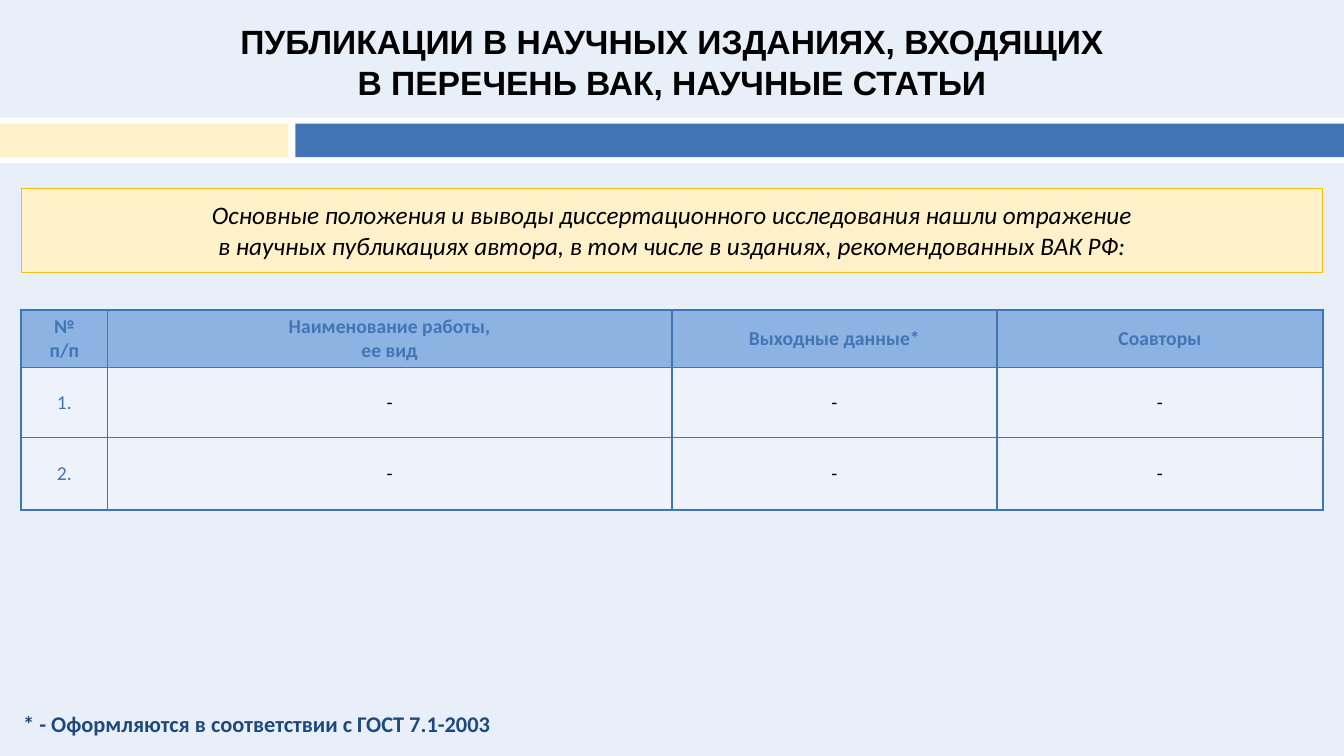
import pptx
import pptx.dml.color
import pptx.enum.shapes
import pptx.enum.text
import pptx.oxml.ns
import pptx.util
from lxml import etree

Pt = pptx.util.Pt
ALIGN = pptx.enum.text.PP_ALIGN
ANCHOR = pptx.enum.text.MSO_ANCHOR

COLORS = {
    "background": "E8EFF9",
    "white": "FFFFFF",
    "black": "000000",
    "blue": "4175B5",
    "navy": "1F497D",
    "cream": "FFF2CB",
    "gold": "F5BD14",
    "header": "8DB3E2",
    "cell": "EEF2FA",
}

SLIDE_WIDTH, SLIDE_HEIGHT = 960, 540
MARGIN = 15.2
CONTENT_WIDTH = SLIDE_WIDTH - 2 * MARGIN

TITLE = ["ПУБЛИКАЦИИ В НАУЧНЫХ ИЗДАНИЯХ, ВХОДЯЩИХ", "В ПЕРЕЧЕНЬ ВАК, НАУЧНЫЕ СТАТЬИ"]
SUMMARY = [
    "Основные положения и выводы диссертационного исследования нашли отражение",
    "в научных публикациях автора, в том числе в изданиях, рекомендованных ВАК РФ:",
]
FOOTNOTE = ["* - Оформляются в соответствии с ГОСТ 7.1-2003"]

PUBLICATIONS = [
    [["№", "п/п"], ["Наименование работы,", "ее вид"], ["Выходные данные*"], ["Соавторы"]],
    [["1."], ["-"], ["-"], ["-"]],
    [["2."], ["-"], ["-"], ["-"]],
]
COLUMN_WIDTHS = [61.6, 403, 232.5, 232.5]
ROW_HEIGHTS = [41, 50, 52]


def rgb(name):
    return pptx.dml.color.RGBColor.from_string(COLORS[name])


def write_text(frame, lines, size, color="black", font="Calibri", bold=False,
               italic=False, align=ALIGN.CENTER):
    """Put each line in its own paragraph of the text frame."""
    for index, line in enumerate(lines):
        para = frame.paragraphs[0] if index == 0 else frame.add_paragraph()
        para.alignment = align
        para.space_before = Pt(0)
        span = para.add_run()
        span.text = line
        span.font.name = font
        span.font.size = Pt(size)
        span.font.bold = bold
        span.font.italic = italic
        span.font.color.rgb = rgb(color)


def add_title(page):
    title = page.shapes.title
    title.left, title.top, title.width, title.height = Pt(161), Pt(11.5), Pt(638), Pt(65.5)
    frame = title.text_frame
    frame.word_wrap = False
    frame.auto_size = pptx.enum.text.MSO_AUTO_SIZE.NONE
    frame.vertical_anchor = ANCHOR.TOP
    write_text(frame, TITLE, 24, font="Arial", bold=True)


def add_bar(page, left, top, width, height, fill, line=None):
    bar = page.shapes.add_shape(pptx.enum.shapes.MSO_SHAPE.RECTANGLE,
                                Pt(left), Pt(top), Pt(width), Pt(height))
    bar.shadow.inherit = False
    bar.fill.solid()
    bar.fill.fore_color.rgb = rgb(fill)
    if line:
        bar.line.color.rgb = rgb(line)
        bar.line.width = Pt(1)
    else:
        bar.line.fill.background()


def add_text_box(page, left, top, width, height, lines, size, wrap=True, **text_format):
    box = page.shapes.add_textbox(Pt(left), Pt(top), Pt(width), Pt(height))
    box.text_frame.word_wrap = wrap
    write_text(box.text_frame, lines, size, **text_format)


def add_cell_borders(cell, color, width):
    properties = cell._tc.get_or_add_tcPr()
    qn = pptx.oxml.ns.qn
    for side in ("lnL", "lnR", "lnT", "lnB"):
        border = etree.SubElement(properties, qn("a:" + side), w=str(Pt(width)))
        fill = etree.SubElement(border, qn("a:solidFill"))
        etree.SubElement(fill, qn("a:srgbClr"), val=COLORS[color])


def add_publications_table(page):
    frame = page.shapes.add_table(len(ROW_HEIGHTS), len(COLUMN_WIDTHS), Pt(MARGIN), Pt(221.5),
                                  Pt(CONTENT_WIDTH), Pt(sum(ROW_HEIGHTS)))
    table = frame.table
    for column, width in zip(table.columns, COLUMN_WIDTHS):
        column.width = Pt(width)
    for row, height in zip(table.rows, ROW_HEIGHTS):
        row.height = Pt(height)
    for r, row_texts in enumerate(PUBLICATIONS):
        is_header = r == 0
        for c, lines in enumerate(row_texts):
            cell = table.cell(r, c)
            add_cell_borders(cell, "blue", 1.5)
            cell.fill.solid()
            cell.fill.fore_color.rgb = rgb("header" if is_header else "cell")
            cell.vertical_anchor = ANCHOR.MIDDLE
            write_text(cell.text_frame, lines, 14, bold=is_header,
                       color="blue" if is_header or c == 0 else "black")


def main():
    deck = pptx.Presentation()
    deck.slide_width, deck.slide_height = Pt(SLIDE_WIDTH), Pt(SLIDE_HEIGHT)
    page = deck.slides.add_slide(deck.slide_layouts.get_by_name("Title Only"))
    page.background.fill.solid()
    page.background.fill.fore_color.rgb = rgb("background")

    add_title(page)
    add_bar(page, 0, 84, SLIDE_WIDTH, 32.4, "white")
    add_bar(page, 211, 88.4, SLIDE_WIDTH - 211, 23.8, "blue")
    add_bar(page, 0, 88.4, 206, 23.8, "cream")
    add_bar(page, MARGIN, 134.5, CONTENT_WIDTH, 60, "cream", line="gold")
    add_text_box(page, 30, 139, 900, 51, SUMMARY, 18, italic=True)
    add_publications_table(page)
    add_text_box(page, 9.5, 504, 356.5, 26.6, FOOTNOTE, 16, wrap=False,
                 color="navy", bold=True, align=ALIGN.LEFT)
    deck.save("out.pptx")


if __name__ == "__main__":
    main()
